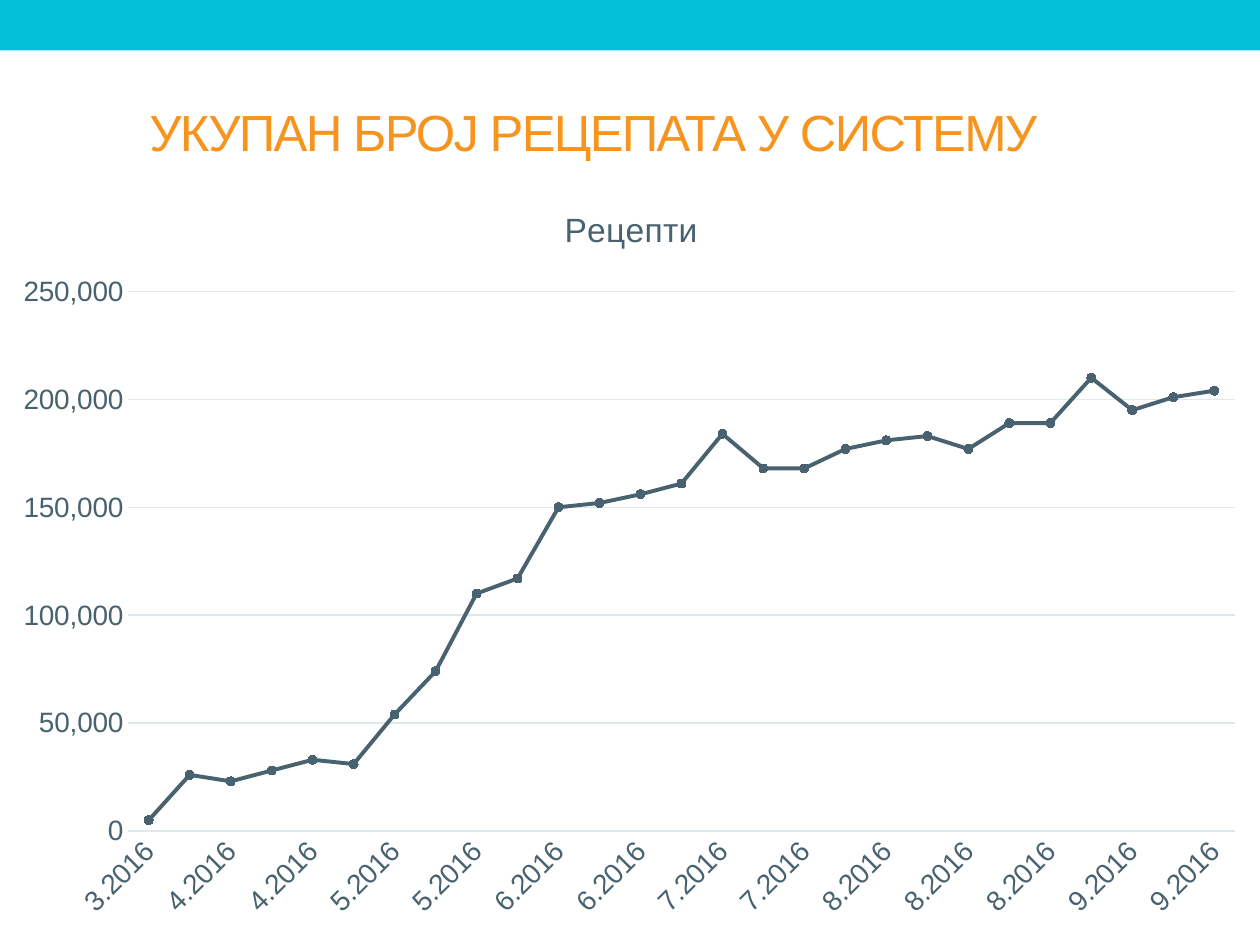
from dataclasses import dataclass

from lxml import etree
from pptx import Presentation
from pptx import util as u
from pptx.chart import data as chart_data
from pptx.dml import color
from pptx.enum import chart as charts, shapes, text
from pptx.oxml import ns


@dataclass(frozen=True)
class Theme:
    """Colours, type sizes and font of the slide."""
    band: color.RGBColor = color.RGBColor.from_string("03BFD7")
    title: color.RGBColor = color.RGBColor.from_string("F7941E")
    ink: color.RGBColor = color.RGBColor.from_string("48626F")
    grid: color.RGBColor = color.RGBColor.from_string("E1E8EC")
    font: str = "Arial"
    title_size: float = 29
    chart_title_size: float = 19.2
    label_size: float = 16


THEME = Theme()
POINTS_PER_MONTH = {3: 1, 4: 4, 5: 5, 6: 4, 7: 4, 8: 5, 9: 4}
PRESCRIPTIONS = [
    5000, 26000, 23000, 28000, 33000, 31000, 54000, 74000, 110000,
    117000, 150000, 152000, 156000, 161000, 184000, 168000, 168000, 177000,
    181000, 183000, 177000, 189000, 189000, 210000, 195000, 201000, 204000,
]


def cm_box(left, top, width, height):
    """Return a box of four lengths given in centimetres."""
    return u.Cm(left), u.Cm(top), u.Cm(width), u.Cm(height)


def style_font(font, size, ink):
    """Apply the theme font with a size and colour."""
    font.name, font.size, font.bold = THEME.font, u.Pt(size), False
    font.color.rgb = ink


def style_line(line, ink, width):
    """Give a line a colour and a width in points."""
    line.color.rgb = ink
    line.width = u.Pt(width)


def add_band(slide, box):
    """Draw the plain band along the top edge."""
    shape = slide.shapes.add_shape(shapes.MSO_SHAPE.RECTANGLE, *box)
    shape.shadow.inherit = False
    shape.fill.solid()
    shape.fill.fore_color.rgb = THEME.band
    shape.line.fill.background()


def add_title(slide, box, words):
    """Write the centred slide title with tightened letters."""
    frame = slide.shapes.add_textbox(*box).text_frame
    frame.word_wrap = True
    frame.vertical_anchor = text.MSO_ANCHOR.MIDDLE
    paragraph = frame.paragraphs[0]
    paragraph.alignment = text.PP_ALIGN.CENTER
    run = paragraph.add_run()
    run.text = words
    run._r.get_or_add_rPr().set("spc", "-100")
    style_font(paragraph.font, THEME.title_size, THEME.title)


def place_plot(chart, left, top, width, height):
    """Fix the inner plot area as fractions of the chart box."""
    plot_area = chart._chartSpace.chart.plotArea
    for old in plot_area.findall(ns.qn("c:layout")):
        plot_area.remove(old)
    layout = etree.Element(ns.qn("c:layout"))
    manual = etree.SubElement(layout, ns.qn("c:manualLayout"))
    settings = {"layoutTarget": "inner", "xMode": "edge", "yMode": "edge",
                "x": left, "y": top, "w": width, "h": height}
    for name, value in settings.items():
        etree.SubElement(manual, ns.qn(f"c:{name}")).set("val", str(value))
    plot_area.insert(0, layout)


def style_axes(chart):
    """Set the slanted month labels, value labels and gridlines."""
    months, values = chart.category_axis, chart.value_axis
    for axis in (months, values):
        axis.major_tick_mark = axis.minor_tick_mark = charts.XL_TICK_MARK.NONE
        style_font(axis.tick_labels.font, THEME.label_size, THEME.ink)
    style_line(months.format.line, THEME.grid, 0.75)
    months._element.txPr.bodyPr.set("rot", "-2700000")
    skip = etree.Element(ns.qn("c:tickLblSkip"))
    skip.set("val", "2")
    months._element.find(ns.qn("c:noMultiLvlLbl")).addprevious(skip)
    values.minimum_scale, values.maximum_scale, values.major_unit = 0, 250000, 50000
    values.format.line.fill.background()
    values.has_major_gridlines = True
    style_line(values.major_gridlines.format.line, THEME.grid, 0.75)
    values.tick_labels.number_format = "#,###;#,###;0"
    values.tick_labels.number_format_is_linked = False


def style_series(series):
    """Draw the series as straight segments with round markers."""
    series.smooth = False
    style_line(series.format.line, THEME.ink, 2.25)
    marker = series.marker
    marker.style, marker.size = charts.XL_MARKER_STYLE.CIRCLE, 5
    marker.format.fill.solid()
    marker.format.fill.fore_color.rgb = THEME.ink
    marker.format.line.color.rgb = THEME.ink


def add_prescription_chart(slide, box):
    """Add the line chart of prescriptions by month."""
    data = chart_data.CategoryChartData()
    data.categories = [f"{month}.2016" for month, count in POINTS_PER_MONTH.items()
                       for _ in range(count)]
    data.add_series("Рецепти", PRESCRIPTIONS)
    chart = slide.shapes.add_chart(
        charts.XL_CHART_TYPE.LINE_MARKERS, *box, data).chart
    style_font(chart.font, THEME.label_size, THEME.ink)
    chart.has_legend = False
    chart.has_title = True
    paragraph = chart.chart_title.text_frame.paragraphs[0]
    paragraph.text = "Рецепти"
    style_font(paragraph.font, THEME.chart_title_size, THEME.ink)
    chart.plots[0].vary_by_categories = False
    style_axes(chart)
    style_series(chart.plots[0].series[0])
    place_plot(chart, 0.1, 0.15, 0.88, 0.72)


def main():
    """Build and save the slide."""
    presentation = Presentation()
    presentation.slide_width, presentation.slide_height = u.Cm(25.4), u.Cm(19.05)
    slide = presentation.slides.add_slide(presentation.slide_layouts[6])
    add_band(slide, cm_box(0, 0, 25.4, 1.02))
    add_title(slide, cm_box(1.27, 1.27, 21.39, 2.74), "УКУПАН БРОЈ РЕЦЕПАТА У СИСТЕМУ")
    add_prescription_chart(slide, cm_box(0.05, 3.61, 25.35, 15.11))
    presentation.save("out.pptx")


if __name__ == "__main__":
    main()
